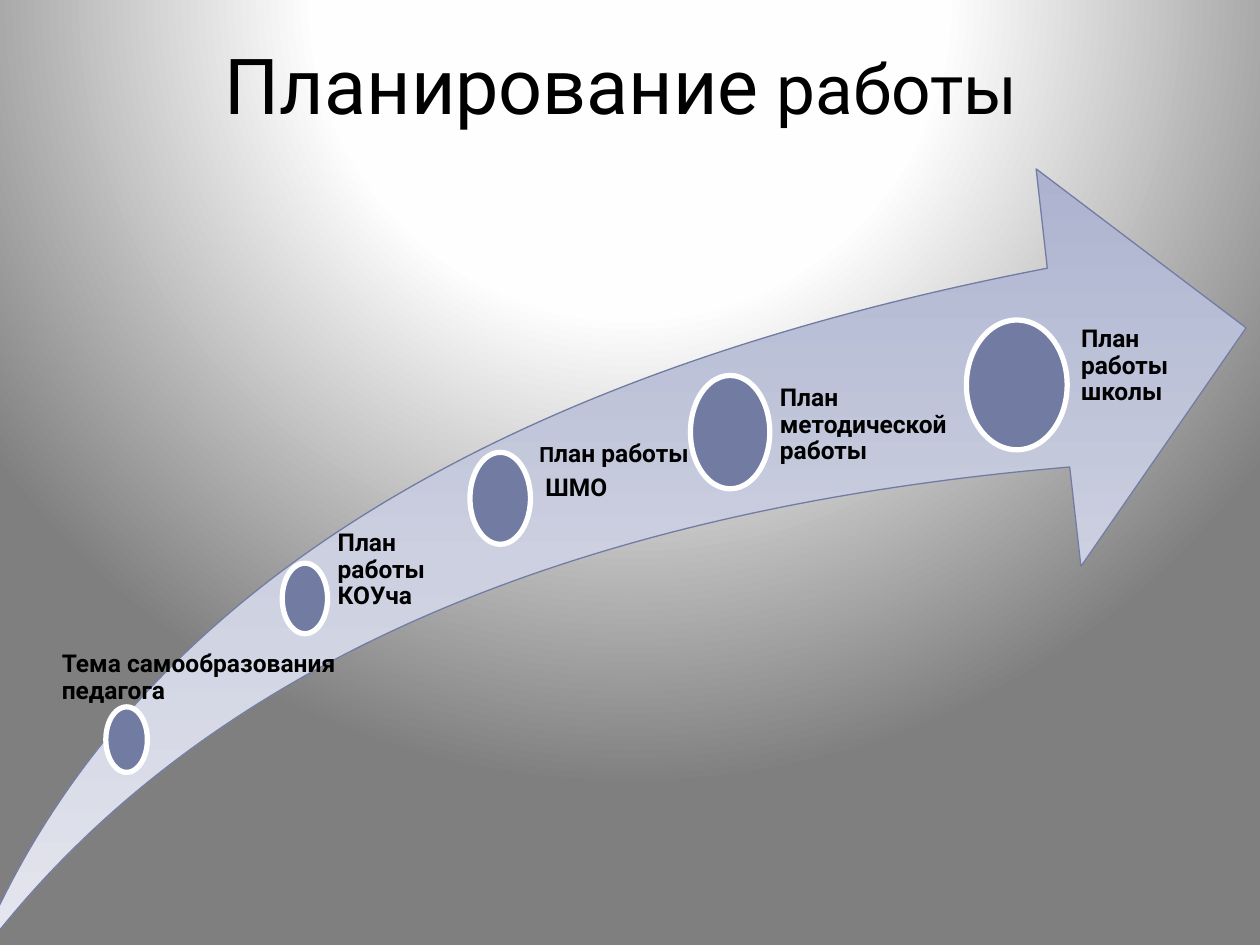
"""Build the work planning slide: a rising arrow with five steps."""
from lxml import etree
from pptx import Presentation
from pptx.dml.color import RGBColor
from pptx.enum import shapes, text
from pptx.oxml import ns
from pptx.util import Inches, Pt

BLACK = RGBColor(0x00, 0x00, 0x00)
WHITE = RGBColor(0xFF, 0xFF, 0xFF)
SLATE = RGBColor(0x72, 0x7C, 0xA3)
GLOW = [(0, WHITE), (40, RGBColor(0xFE, 0xFE, 0xFE)), (100, RGBColor(0x7F, 0x7F, 0x7F))]
SWEEP = [(0, RGBColor(0xAD, 0xB3, 0xCF)), (50, RGBColor(0xCC, 0xD0, 0xE0)),
         (100, RGBColor(0xE6, 0xE7, 0xEF))]


def blend(stops, tail):
    marks = "".join(f'<a:gs pos="{pos * 1000}"><a:srgbClr val="{hue}"/></a:gs>'
                    for pos, hue in stops)
    return etree.fromstring(f'<a:gradFill xmlns:a="{ns.nsuri("a")}" rotWithShape="1">'
                            f'<a:gsLst>{marks}</a:gsLst>{tail}</a:gradFill>')


def write(box, lines, look, para):
    frame = slide.shapes.add_textbox(*map(Inches, box)).text_frame
    frame.word_wrap = True
    for num, runs in enumerate(lines):
        line = frame.paragraphs[0] if num == 0 else frame.add_paragraph()
        for key, val in para.items():
            setattr(line, key, val)
        for words, size in runs:
            run = line.add_run()
            run.text = words
            run.font.size = Pt(size)
            run.font.color.rgb = BLACK
            for key, val in look.items():
                setattr(run.font, key, val)
    return frame


deck = Presentation()
deck.slide_width, deck.slide_height = Inches(10), Inches(7.5)
slide = deck.slides.add_slide(deck.slide_layouts[6])

back = slide.background.fill
back.gradient()
old = slide.element.find(".//" + ns.qn("a:gradFill"))
old.getparent().replace(old, blend(
    GLOW, '<a:path path="circle">'
    '<a:fillToRect l="50000" t="-80000" r="50000" b="180000"/></a:path>'))

title = write((0.5, 0.3, 9, 0.72), [[("Планирование", 44.1), (" работы ", 39.6)]],
              {"name": "Roboto"}, {"alignment": text.PP_ALIGN.CENTER})
title.vertical_anchor = text.MSO_ANCHOR.MIDDLE

kind = shapes.MSO_SHAPE
arrow = slide.shapes.add_shape(kind.SWOOSH_ARROW, *map(Inches, (-0.21, 1.34, 10.1, 6.31)))
arrow.adjustments[0] = arrow.adjustments[1] = 0.25
arrow.shadow.inherit = False
arrow.fill.gradient()
old = arrow.element.spPr.find(ns.qn("a:gradFill"))
old.getparent().replace(old, blend(SWEEP, '<a:lin ang="5400000" scaled="0"/>'))
arrow.line.color.rgb = SLATE
arrow.line.width = Pt(0.75)

STEPS = [
    ((0.84, 5.61, 0.33, 0.52), (0.37, 5.17, 2.38, 3.4), 0.12,
     [[("Тема самообразования педагога", 14)]]),
    ((2.24, 4.47, 0.36, 0.56), (2.49, 4.21, 1.14, 4.18), 0.19,
     [[("План работы КОУча", 14)]]),
    ((3.73, 3.59, 0.48, 0.73), (4.02, 3.5, 1.65, 4.7), 0.26,
     [[("П", 12), ("лан работы", 14)], [(" ШМО", 14)]]),
    ((5.48, 2.98, 0.63, 0.9), (5.86, 3.06, 2, 4.9), 0.33,
     [[("План методической работы", 14)]]),
    ((7.67, 2.54, 0.8, 1.03), (8.16, 2.59, 1.44, 5.42), 0.42,
     [[("План работы школы", 14)]]),
]
for spot, box, inset, lines in STEPS:
    dot = slide.shapes.add_shape(kind.OVAL, *map(Inches, spot))
    dot.shadow.inherit = False
    dot.fill.solid()
    dot.fill.fore_color.rgb = SLATE
    dot.line.color.rgb = WHITE
    dot.line.width = Pt(3)
    label = write(box, lines, {"name": "Roboto", "bold": True},
                  {"line_spacing": 0.9, "space_after": Pt(4.5)})
    label.margin_left = Inches(inset)
    label.margin_top = label.margin_right = label.margin_bottom = 0

deck.save("out.pptx")
